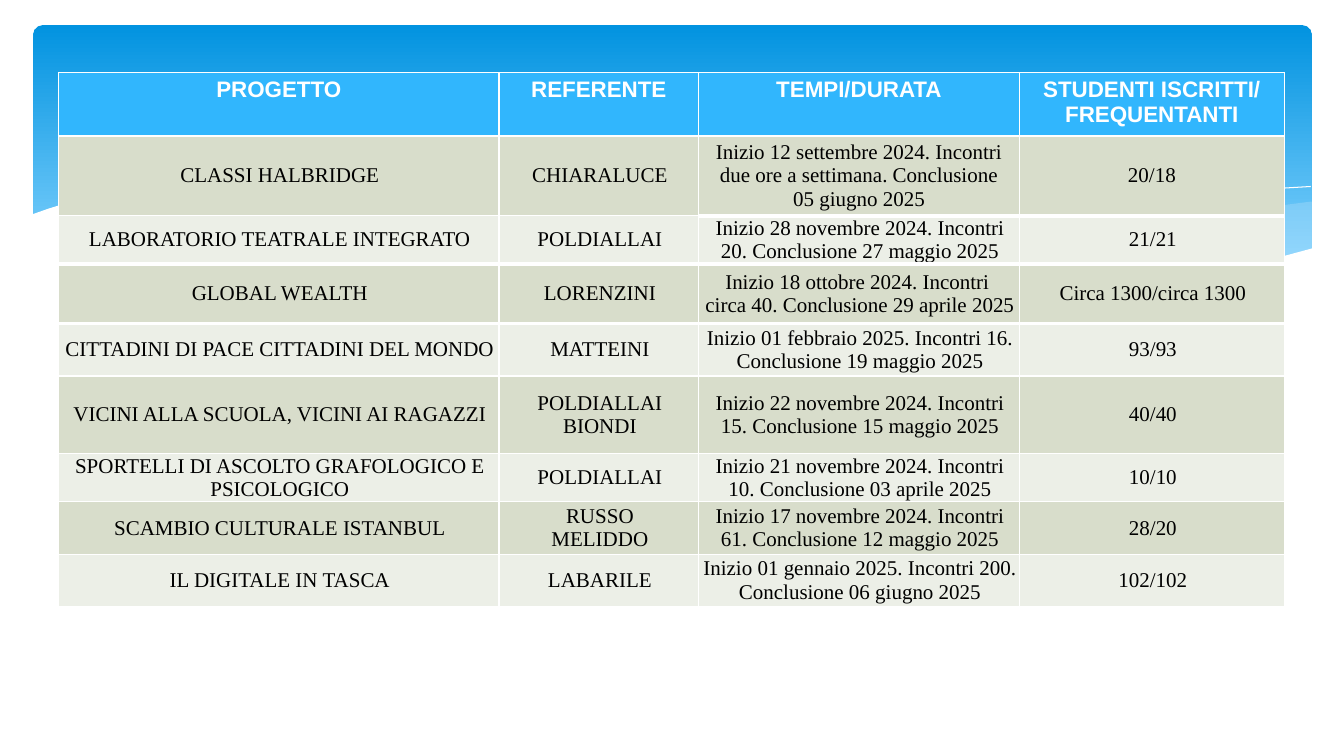
from lxml.etree import SubElement
from pptx import Presentation
from pptx.dml.color import RGBColor
from pptx.enum.shapes import MSO_SHAPE
from pptx.enum.text import MSO_ANCHOR, PP_ALIGN
from pptx.oxml.ns import qn
from pptx.util import Emu, Inches, Pt

WIDE, HIGH = 13.33, 7.5
HUES = {"top": "0293E0", "low": "83D3FE", "wave": "C6E7FC", "white": "FFFFFF",
        "head": "31B6FD", "odd": "D8DDCB", "even": "ECEFE7", "ink": "000000"}

# Wave outlines, in hundredths of an inch
FRONT = [(1300, 200), (1246, 207), (1188, 216), (1110, 230), (1038, 242),
         (972, 253), (882, 265), (940, 271), (1009, 276), (1085, 278),
         (1151, 275), (1207, 269), (1257, 259), (1301, 247), (1301, 200)]
BACK = [(1190, 273), (1116, 265), (1034, 254), (941, 240), (839, 222),
        (759, 208), (686, 198), (619, 191), (560, 187), (482, 185),
        (418, 188), (382, 191), (456, 199), (539, 211), (599, 222),
        (706, 240), (802, 255), (887, 266), (963, 274), (1046, 278),
        (1118, 278), (1190, 273)]
CREST = [(412, 195), (458, 190), (516, 187), (577, 187), (652, 190),
         (742, 197), (848, 208), (970, 226), (1108, 251), (1210, 272)]
RISE = [(818, 257), (896, 241), (997, 223), (1075, 210), (1155, 199),
        (1213, 192), (1267, 187), (1300, 185)]
EDGE = [(1303, 246), (1266, 256), (1213, 267), (1151, 274), (1078, 277),
        (992, 274), (891, 265), (772, 250), (671, 233), (596, 220),
        (521, 207), (453, 197), (390, 190), (333, 186), (282, 184),
        (235, 184), (176, 186), (127, 191), (89, 197), (61, 203),
        (48, 207), (31, 213), (31, 329), (1303, 329), (1303, 246)]

COLS = [4.37, 1.98, 3.18, 2.63]
ROWS = [0.63, 0.79, 0.48, 0.59, 0.52, 0.77, 0.48, 0.52, 0.52]
DATA = [
    ("PROGETTO", "REFERENTE", "TEMPI/DURATA", "STUDENTI ISCRITTI/\nFREQUENTANTI"),
    ("CLASSI HALBRIDGE", "CHIARALUCE",
     "Inizio 12 settembre 2024. Incontri due ore a settimana. Conclusione 05 giugno 2025",
     "20/18"),
    ("LABORATORIO TEATRALE INTEGRATO", "POLDIALLAI",
     "Inizio 28 novembre 2024. Incontri 20. Conclusione 27 maggio 2025", "21/21"),
    ("GLOBAL WEALTH", "LORENZINI",
     "Inizio 18 ottobre 2024. Incontri  circa 40. Conclusione 29 aprile 2025",
     "Circa 1300/circa 1300"),
    ("CITTADINI DI PACE CITTADINI DEL MONDO", "MATTEINI",
     "Inizio 01 febbraio 2025. Incontri 16. Conclusione 19 maggio 2025", "93/93"),
    ("VICINI ALLA SCUOLA, VICINI AI RAGAZZI", "POLDIALLAI\nBIONDI",
     "Inizio 22 novembre 2024. Incontri 15. Conclusione 15 maggio 2025", "40/40"),
    ("SPORTELLI DI ASCOLTO GRAFOLOGICO E PSICOLOGICO", "POLDIALLAI",
     "Inizio 21 novembre 2024. Incontri 10. Conclusione 03 aprile 2025", "10/10"),
    ("SCAMBIO CULTURALE ISTANBUL", "RUSSO\nMELIDDO",
     "Inizio 17 novembre 2024. Incontri 61. Conclusione 12 maggio 2025", "28/20"),
    ("IL DIGITALE IN TASCA", "LABARILE",
     "Inizio 01 gennaio 2025. Incontri 200. Conclusione 06 giugno 2025", "102/102"),
]


def tint(name):
    return RGBColor.from_string(HUES[name])


def write(frame, text, font="Times New Roman", size=15, hue="ink", bold=False):
    frame.text = text
    for para in frame.paragraphs:
        para.alignment = PP_ALIGN.CENTER
        for run in para.runs:
            run.font.name, run.font.size = font, Pt(size)
            run.font.bold = bold
            run.font.color.rgb = tint(hue)


def wave(slide, dots, fill=None, alpha=100):
    """Draw a filled wave, or a thin white line when no fill is given."""
    pen = slide.shapes.build_freeform(*dots[0], scale=Inches(0.01))
    pen.add_line_segments(dots[1:], close=fill is not None)
    shape = pen.convert_to_shape()
    shape.shadow.inherit = False
    if fill is None:
        shape.fill.background()
        shape.line.color.rgb = tint("white")
        shape.line.width = Pt(0)
        return
    shape.fill.solid()
    shape.fill.fore_color.rgb = tint(fill)
    shape.line.fill.background()
    if alpha < 100:
        color = shape.fill._xPr.find(qn("a:solidFill"))[0]
        SubElement(color, qn("a:alpha"), val=str(alpha * 1000))


def banner(slide, left, top, width, height):
    # Gradient panel
    panel = slide.shapes.add_shape(MSO_SHAPE.ROUNDED_RECTANGLE, *map(
        Inches, (left, top, width, height)))
    panel.adjustments[0] = 0.034
    panel.shadow.inherit = False
    panel.line.fill.background()
    panel.fill.gradient()
    panel.fill.gradient_angle = 270
    for stop, hue, spot in zip(panel.fill.gradient_stops, ("top", "low"), (0, 0.9)):
        stop.color.rgb = tint(hue)
        stop.position = spot
    # Waves over its lower edge
    wave(slide, FRONT, "wave", 29)
    wave(slide, BACK, "wave", 40)
    wave(slide, CREST)
    wave(slide, RISE)
    wave(slide, EDGE, "white")


def border(cell, **widths):
    props = cell._tc.get_or_add_tcPr()
    for side in "LRTB":
        line = SubElement(props, qn("a:ln" + side), w=str(Pt(widths.get(side, 1))))
        fill = SubElement(line, qn("a:solidFill"))
        SubElement(fill, qn("a:srgbClr"), val=HUES["white"])


def dress(cell, row, col):
    """Set the borders, fill and margins of one cell."""
    thick = {}
    if row in (2, 3) or (row == 1 and col > 1):
        thick["B"] = 3
    if row in (3, 4) or (row == 2 and col > 1):
        thick["T"] = 3
    border(cell, **thick)
    cell.fill.solid()
    cell.fill.fore_color.rgb = tint("head" if row == 0 else "odd" if row % 2 else "even")
    loose = row == 0 or (row == 1 and col > 1)
    sides = (0.1, 0.05, 0.1, 0.05) if loose else (0.04, 0.01, 0.02, 0.01)
    (cell.margin_left, cell.margin_top,
     cell.margin_right, cell.margin_bottom) = map(Inches, sides)
    high = row == 0 or (row, col) == (1, 2)
    cell.vertical_anchor = MSO_ANCHOR.TOP if high else MSO_ANCHOR.MIDDLE


def grid(slide, left, top, width, height):
    table = slide.shapes.add_table(len(ROWS), len(COLS), *map(
        Inches, (left, top, width, height))).table
    table.horz_banding = False
    for part, size in zip(table.columns, COLS):
        part.width = Emu(round(Inches(width) * size / sum(COLS)))
    for part, size in zip(table.rows, ROWS):
        part.height = Emu(round(Inches(height) * size / sum(ROWS)))
    for row, texts in enumerate(DATA):
        look = dict(font="Arial", size=16, hue="white", bold=True) if row == 0 else {}
        for col, text in enumerate(texts):
            cell = table.cell(row, col)
            dress(cell, row, col)
            write(cell.text_frame, text, **look)


def main():
    deck = Presentation()
    deck.slide_width, deck.slide_height = Inches(WIDE), Inches(HIGH)
    slide = deck.slides.add_slide(deck.slide_layouts[6])
    banner(slide, 0.33, 0.25, 12.68, 2.7)
    grid(slide, 0.58, 0.72, sum(COLS), sum(ROWS))
    deck.save("out.pptx")


if __name__ == "__main__":
    main()
